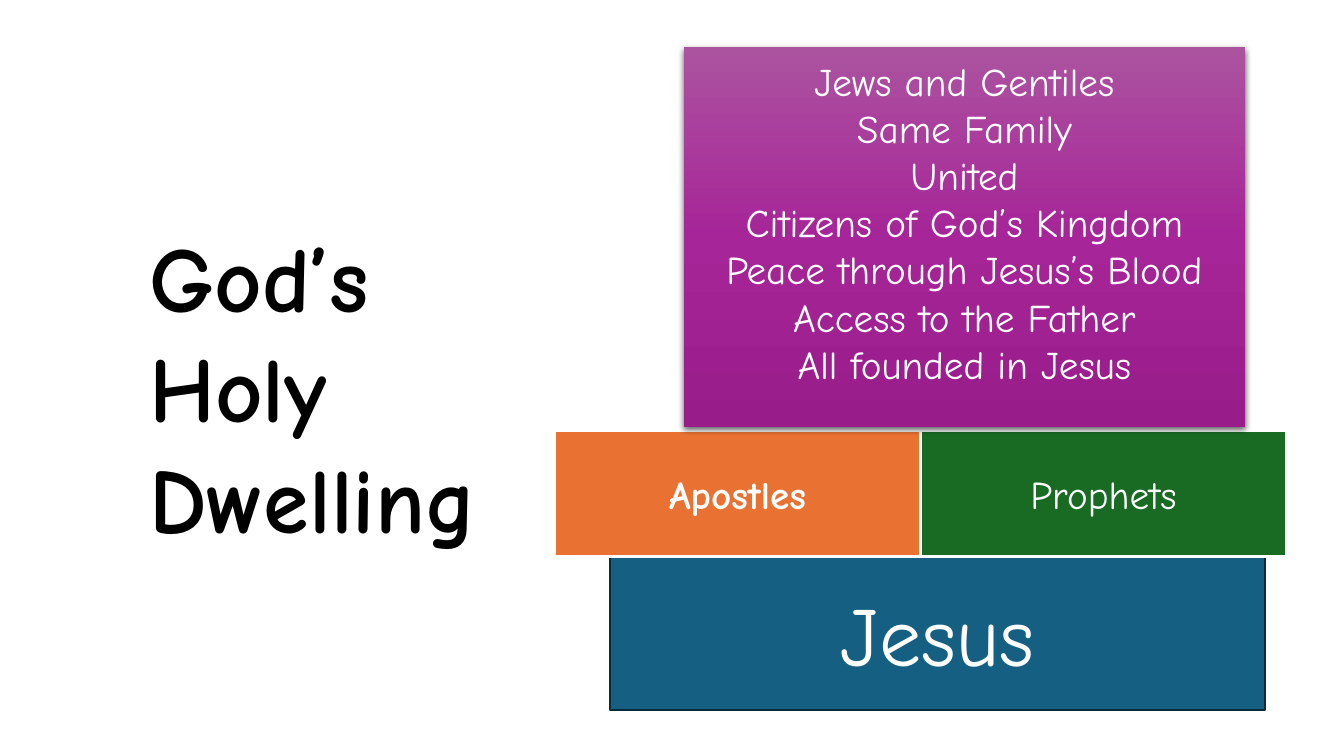
import copy

import lxml.etree
import pptx
import pptx.dml.color
import pptx.enum.shapes
import pptx.enum.text
import pptx.oxml
import pptx.oxml.ns
import pptx.util

PX = 9144  # EMU, 100 px to the inch
COLORS = {
    "white": "FFFFFF", "black": "000000", "blue": "156082", "navy": "092A39",
    "orange": "E97132", "green": "196B24",
    "purple_light": "AC53A0", "purple": "A62598", "purple_dark": "991C8B",
}


def rgb(name):
    return pptx.dml.color.RGBColor.from_string(COLORS[name])


class TempleSlide:
    font = "Comic Neue"

    def __init__(self, deck):
        self.slide = deck.slides.add_slide(deck.slide_layouts[6])

    def set_text(self, frame, lines, size, color, bold, align):
        frame.word_wrap = True
        frame.text = "\n".join(lines)
        for paragraph in frame.paragraphs:
            paragraph.alignment = align
            paragraph.font.name = self.font
            paragraph.font.size = pptx.util.Pt(size)
            paragraph.font.bold = bold
            paragraph.font.color.rgb = rgb(color)

    def block(self, box, lines, size=28, fill=None, line=None, weight=2, bold=False):
        stone = self.slide.shapes.add_shape(
            pptx.enum.shapes.MSO_SHAPE.RECTANGLE, *(n * PX for n in box))
        stone.shadow.inherit = False
        if fill:
            stone.fill.solid()
            stone.fill.fore_color.rgb = rgb(fill)
        if line:
            stone.line.color.rgb = rgb(line)
            stone.line.width = pptx.util.Pt(weight)
        else:
            stone.line.fill.background()
        stone.text_frame.vertical_anchor = pptx.enum.text.MSO_ANCHOR.MIDDLE
        self.set_text(stone.text_frame, lines, size, "white", bold,
                      pptx.enum.text.PP_ALIGN.CENTER)
        return stone

    def shade(self, stone, colors):
        """Fill from top to bottom with evenly spaced colours."""
        stone.fill.gradient()
        stone.fill.gradient_angle = 270
        stops = stone._element.spPr.find(".//" + pptx.oxml.ns.qn("a:gsLst"))
        while len(stops) < len(colors):
            stops.insert(1, copy.deepcopy(stops[0]))
        for i, (stop, color) in enumerate(zip(stone.fill.gradient_stops, colors)):
            stop.position = i / (len(colors) - 1)
            stop.color.rgb = rgb(color)

    def drop_shadow(self, stone):
        effects = stone._element.spPr.find(pptx.oxml.ns.qn("a:effectLst"))
        shadow = lxml.etree.SubElement(
            effects, pptx.oxml.ns.qn("a:outerShdw"), blurRad=str(pptx.util.Pt(4.5)),
            dist=str(pptx.util.Pt(1.5)), dir="5400000", algn="ctr", rotWithShape="0")
        color = lxml.etree.SubElement(
            shadow, pptx.oxml.ns.qn("a:srgbClr"), val=COLORS["black"])
        lxml.etree.SubElement(color, pptx.oxml.ns.qn("a:alpha"), val="63000")

    def title(self, box, words, size):
        heading = self.slide.shapes.add_textbox(*(n * PX for n in box))
        self.set_text(heading.text_frame, [words], size, "black", True,
                      pptx.enum.text.PP_ALIGN.LEFT)
        heading.text_frame.auto_size = pptx.enum.text.MSO_AUTO_SIZE.SHAPE_TO_FIT_TEXT


def main():
    deck = pptx.Presentation()
    deck.slide_width, deck.slide_height = 1333 * PX, 750 * PX
    temple = TempleSlide(deck)

    temple.block((605, 552, 650, 152), ["Jesus"], 60, "blue", "navy", 1.5)
    foundation = [("Apostles", "orange", True), ("Prophets", "green", False)]
    for i, (name, color, bold) in enumerate(foundation):
        temple.block((550 + 363 * i, 427, 363, 125), [name],
                     fill=color, line="white", bold=bold)

    household = temple.block((678, 47, 557, 377), [
        "Jews and Gentiles",
        "Same Family",
        "United",
        "Citizens of God’s Kingdom",
        "Peace through Jesus’s Blood",
        "Access to the Father",
        "All founded in Jesus",
    ])
    household.text_frame.margin_bottom = 35 * PX
    temple.shade(household, ["purple_light", "purple", "purple_dark"])
    temple.drop_shadow(household)

    temple.title((138, 213, 432, 343), "God’s Holy Dwelling", 66)
    deck.save("out.pptx")


if __name__ == "__main__":
    main()
